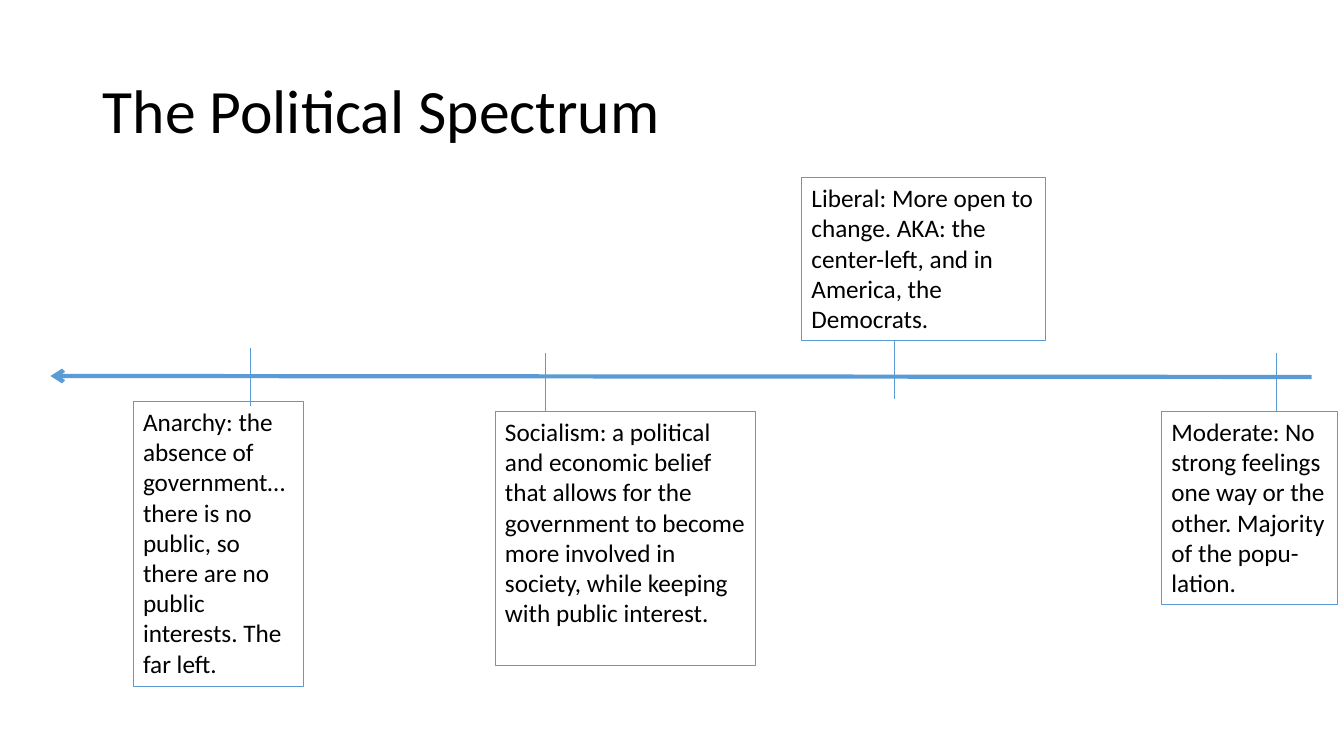
from lxml import etree
from pptx import Presentation
from pptx import util as u
from pptx.dml import color
from pptx.enum import shapes, text
from pptx.oxml import ns

SCALE = 9144  # EMU in one px, 100 px to the inch
BLUE, BLACK = "5B9BD5", "000000"
TICK = 58

# Box left, top, width, height; tick x, top; words
VIEWS = [
    ((132, 398, 169, 283), (248, 345),
     "Anarchy: the absence of government…there is no public, so there are "
     "no public interests. The far left."),
    ((491, 408, 258, 252), (541, 350),
     "Socialism: a political and economic belief that allows for the "
     "government to become more involved in society, while keeping with "
     "public interest."),
    ((795, 176, 242, 162), (887, 338),
     "Liberal: More open to change. AKA: the center-left, and in America, "
     "the Democrats."),
    ((1152, 408, 175, 192), (1266, 350),
     "Moderate: No strong feelings one way or the other. Majority of the "
     "popu-lation."),
]


def px(n):
    return u.Emu(n * SCALE)


def rgb(code):
    return color.RGBColor.from_string(code)


def assign(item, **values):
    for name, value in values.items():
        setattr(item, name, value)


def write(frame, words, size, anchor, space):
    assign(frame, text=words, word_wrap=True, vertical_anchor=anchor,
           auto_size=text.MSO_AUTO_SIZE.NONE)
    para = frame.paragraphs[0]
    assign(para, alignment=text.PP_ALIGN.LEFT, line_spacing=space)
    font = para.runs[0].font
    assign(font, name="Calibri", size=u.Pt(size))
    font.color.rgb = rgb(BLACK)


def stroke(line, width):
    line.color.rgb = rgb(BLUE)
    line.width = u.Pt(width)


def rule(slide, start, end, width, arrow=False):
    line = slide.shapes.add_connector(
        shapes.MSO_CONNECTOR.STRAIGHT, *map(px, start + end))
    stroke(line.line, width)
    props = line._element.spPr
    if arrow:
        tip = etree.SubElement(line.line._get_or_add_ln(), ns.qn("a:tailEnd"))
        tip.set("type", "arrow")
    etree.SubElement(props, ns.qn("a:effectLst"))


def title(slide, box, words):
    head = slide.shapes.title
    assign(head, **dict(zip(("left", "top", "width", "height"), map(px, box))))
    write(head.text_frame, words, 44, text.MSO_ANCHOR.MIDDLE, 0.9)


def view(slide, box, tick, words):
    x, y = tick
    rule(slide, tick, (x, y + TICK), 0.5)
    card = slide.shapes.add_shape(shapes.MSO_SHAPE.RECTANGLE, *map(px, box))
    card.shadow.inherit = False
    card.fill.background()
    stroke(card.line, 0.75)
    write(card.text_frame, words, 18, text.MSO_ANCHOR.TOP, 1.0)


def main():
    deck = Presentation()
    assign(deck, slide_width=px(1333), slide_height=px(750))
    slide = deck.slides.add_slide(deck.slide_layouts.get_by_name("Title Only"))
    title(slide, (92, 40, 1150, 145), "The Political Spectrum")

    # Axis pointing left, then the views along it
    rule(slide, (1301, 374), (50, 373), 3, arrow=True)
    for box, tick, words in VIEWS:
        view(slide, box, tick, words)
    deck.save("out.pptx")


if __name__ == "__main__":
    main()
